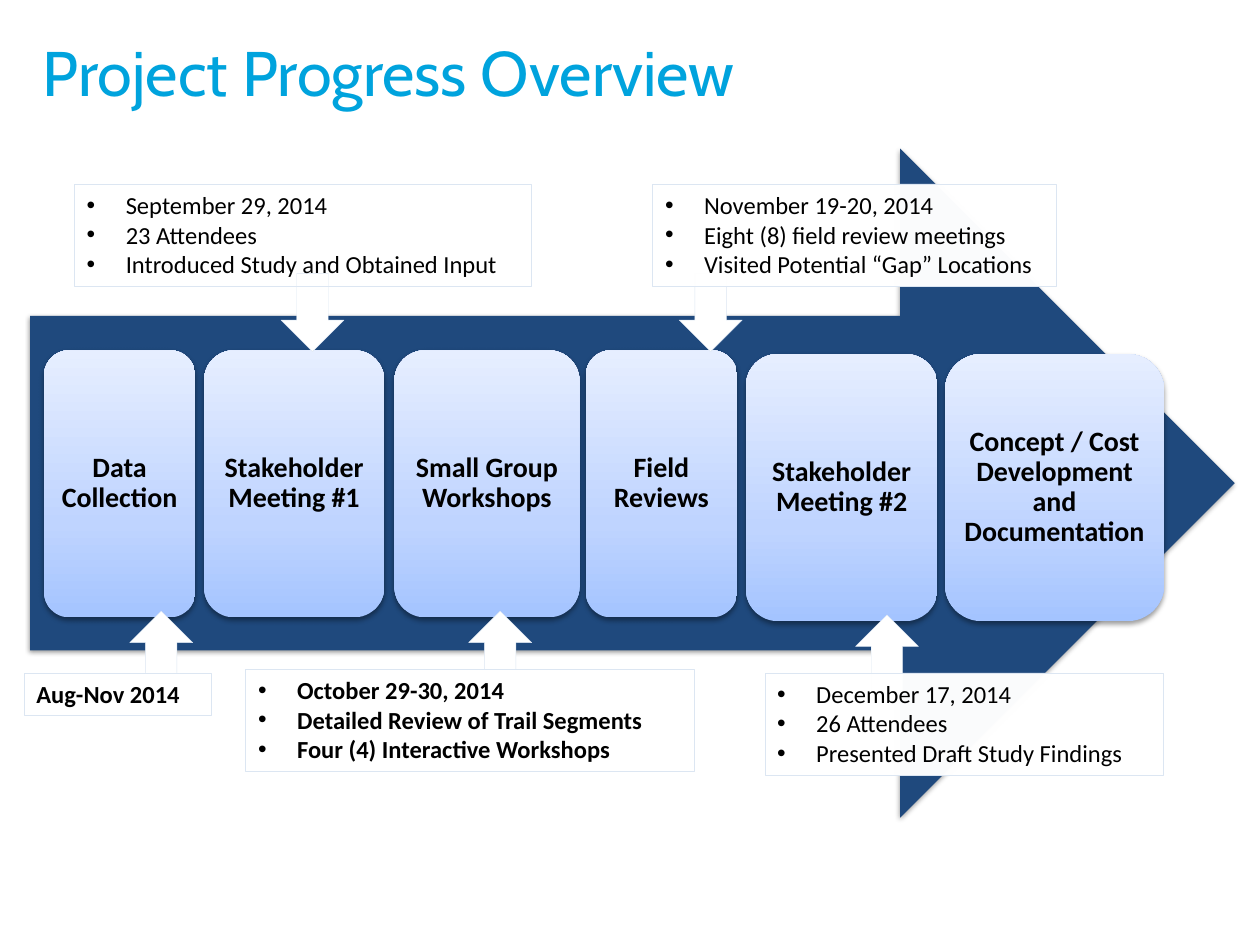
import copy

import pptx
import pptx.dml.color
import pptx.enum.shapes
import pptx.enum.text
import pptx.oxml
import pptx.oxml.ns
import pptx.util
from pptx.util import Inches

SHAPES = pptx.enum.shapes.MSO_SHAPE
ALIGN = pptx.enum.text.PP_ALIGN
ANCHOR = pptx.enum.text.MSO_ANCHOR
AUTO_SIZE = pptx.enum.text.MSO_AUTO_SIZE

NAVY, WHITE, BLACK, TITLE_BLUE, PALE_BLUE = "1F497D", "FFFFFF", "000000", "00A3DD", "DCE6F2"
CARD_GRADIENT = [(0, "A4C4FF"), (0.35, "BFD4FF"), (1, "E6EEFF")]

# left, top, width, label
STAGES = [
    (0.35, 2.78, 1.2, "Data Collection"),
    (1.62, 2.78, 1.43, "Stakeholder Meeting #1"),
    (3.13, 2.78, 1.47, "Small Group Workshops"),
    (4.65, 2.78, 1.2, "Field Reviews"),
    (5.92, 2.81, 1.52, "Stakeholder Meeting #2"),
    (7.5, 2.81, 1.74, "Concept / Cost Development and Documentation"),
]
# left, top, rotation
POINTERS = [(3.72, 4.85, 0), (2.23, 2.17, 180), (5.39, 2.17, 180), (6.79, 4.88, 0), (1.03, 4.85, 0)]
# left, top, width, height, lines, format
NOTES = [
    (6.07, 5.34, 3.16, 0.81,
     ["December 17, 2014", "26 Attendees", "Presented Draft Study Findings"], {"opacity": 98}),
    (1.95, 5.31, 3.56, 0.81,
     ["October 29-30, 2014", "Detailed Review of Trail Segments",
      "Four (4) Interactive Workshops"], {"bold": True}),
    (0.19, 5.34, 1.49, 0.34, ["Aug-Nov 2014"], {"bold": True, "bullets": False}),
    (0.59, 1.46, 3.63, 0.81,
     ["September 29, 2014", "23 Attendees", "Introduced Study and Obtained Input"], {"fill": None}),
    (5.18, 1.46, 3.2, 0.81,
     ["November 19-20, 2014", "Eight (8) field review meetings",
      "Visited Potential “Gap” Locations"], {"opacity": 98}),
]


def rgb(value):
    return pptx.dml.color.RGBColor.from_string(value)


def add_xml(parent, tag, **attributes):
    child = pptx.oxml.ns.qn(tag)
    element = parent.makeelement(child, attributes)
    parent.append(element)
    return element


def add_bullet(para):
    properties = para._p.get_or_add_pPr()
    indent = Inches(0.31)
    properties.set("marL", str(indent))
    properties.set("indent", str(-indent))
    add_xml(properties, "a:buFont", typeface="Arial")
    add_xml(properties, "a:buChar", char="•")


def write_text(frame, lines, size, font="Calibri", color=BLACK, bold=False,
               align=ALIGN.LEFT, anchor=ANCHOR.TOP, spacing=None, bullets=False):
    frame.word_wrap = True
    frame.vertical_anchor = anchor
    for index, line in enumerate(lines):
        para = frame.paragraphs[0] if index == 0 else frame.add_paragraph()
        para.alignment = align
        if spacing:
            para.line_spacing = spacing
        if bullets:
            add_bullet(para)
        span = para.add_run()
        span.text = line
        span.font.name = font
        span.font.size = pptx.util.Pt(size)
        span.font.bold = bold
        span.font.color.rgb = rgb(color)


def add_shape(slide, kind, left, top, width, height, fill=None, line=None):
    shape = slide.shapes.add_shape(kind, Inches(left), Inches(top), Inches(width), Inches(height))
    shape.shadow.inherit = False
    if fill:
        shape.fill.solid()
        shape.fill.fore_color.rgb = rgb(fill)
    else:
        shape.fill.background()
    if line:
        shape.line.color.rgb = rgb(line)
        shape.line.width = pptx.util.Pt(0.25)
    else:
        shape.line.fill.background()
    return shape


def add_shadow(shape):
    effects = shape._element.spPr.find(pptx.oxml.ns.qn("a:effectLst"))
    shadow = add_xml(effects, "a:outerShdw", blurRad=str(pptx.util.Pt(3.1)),
                     dist=str(pptx.util.Pt(1.6)), dir="5400000", rotWithShape="0")
    color = add_xml(shadow, "a:srgbClr", val=BLACK)
    add_xml(color, "a:alpha", val="38000")


def fill_gradient(shape):
    """Fill from the bottom up with the card colours."""
    shape.fill.gradient()
    shape.fill.gradient_angle = 90
    stop_list = shape._element.spPr.find(".//" + pptx.oxml.ns.qn("a:gsLst"))
    stop_list.append(copy.deepcopy(stop_list[-1]))
    for stop, (position, color) in zip(shape.fill.gradient_stops, CARD_GRADIENT):
        stop.position = position
        stop.color.rgb = rgb(color)


def add_stage(slide, left, top, width, label):
    card = add_shape(slide, SHAPES.ROUNDED_RECTANGLE, left, top, width, 2.12)
    fill_gradient(card)
    add_shadow(card)
    frame = card.text_frame
    frame.margin_left = frame.margin_right = Inches(0.07)
    frame.margin_top = frame.margin_bottom = Inches(0.07)
    write_text(frame, [label], 16, bold=True, align=ALIGN.CENTER,
               anchor=ANCHOR.MIDDLE, spacing=0.9)


def add_note(slide, left, top, width, height, lines, fill=WHITE, opacity=100,
             bold=False, bullets=True):
    note = add_shape(slide, SHAPES.RECTANGLE, left, top, width, height, fill, PALE_BLUE)
    if opacity < 100:
        color = note._element.spPr.find(
            pptx.oxml.ns.qn("a:solidFill") + "/" + pptx.oxml.ns.qn("a:srgbClr"))
        add_xml(color, "a:alpha", val=str(opacity * 1000))
    note.text_frame.auto_size = AUTO_SIZE.SHAPE_TO_FIT_TEXT
    write_text(note.text_frame, lines, 14, bold=bold, bullets=bullets)


def set_title(slide, text):
    title = slide.shapes.title
    title.left, title.top = Inches(0.24), Inches(-0.06)
    title.width, title.height = Inches(9), Inches(1.25)
    title.text_frame.auto_size = AUTO_SIZE.NONE
    write_text(title.text_frame, [text], 36, font="Cabin", color=TITLE_BLUE, anchor=ANCHOR.MIDDLE)


def main():
    deck = pptx.Presentation()
    deck.slide_width, deck.slide_height = Inches(10), Inches(7.5)
    slide = deck.slides.add_slide(deck.slide_layouts[5])
    set_title(slide, "Project Progress Overview")
    add_shadow(add_shape(slide, SHAPES.RIGHT_ARROW, 0.24, 1.18, 9.56, 5.31, NAVY))
    for stage in STAGES:
        add_stage(slide, *stage)
    for left, top, rotation in POINTERS:
        pointer = add_shape(slide, SHAPES.UP_ARROW, left, top, 0.5, 0.62, WHITE, PALE_BLUE)
        pointer.rotation = rotation
    for *place, lines, style in NOTES:
        add_note(slide, *place, lines, **style)
    deck.save("out.pptx")


if __name__ == "__main__":
    main()
